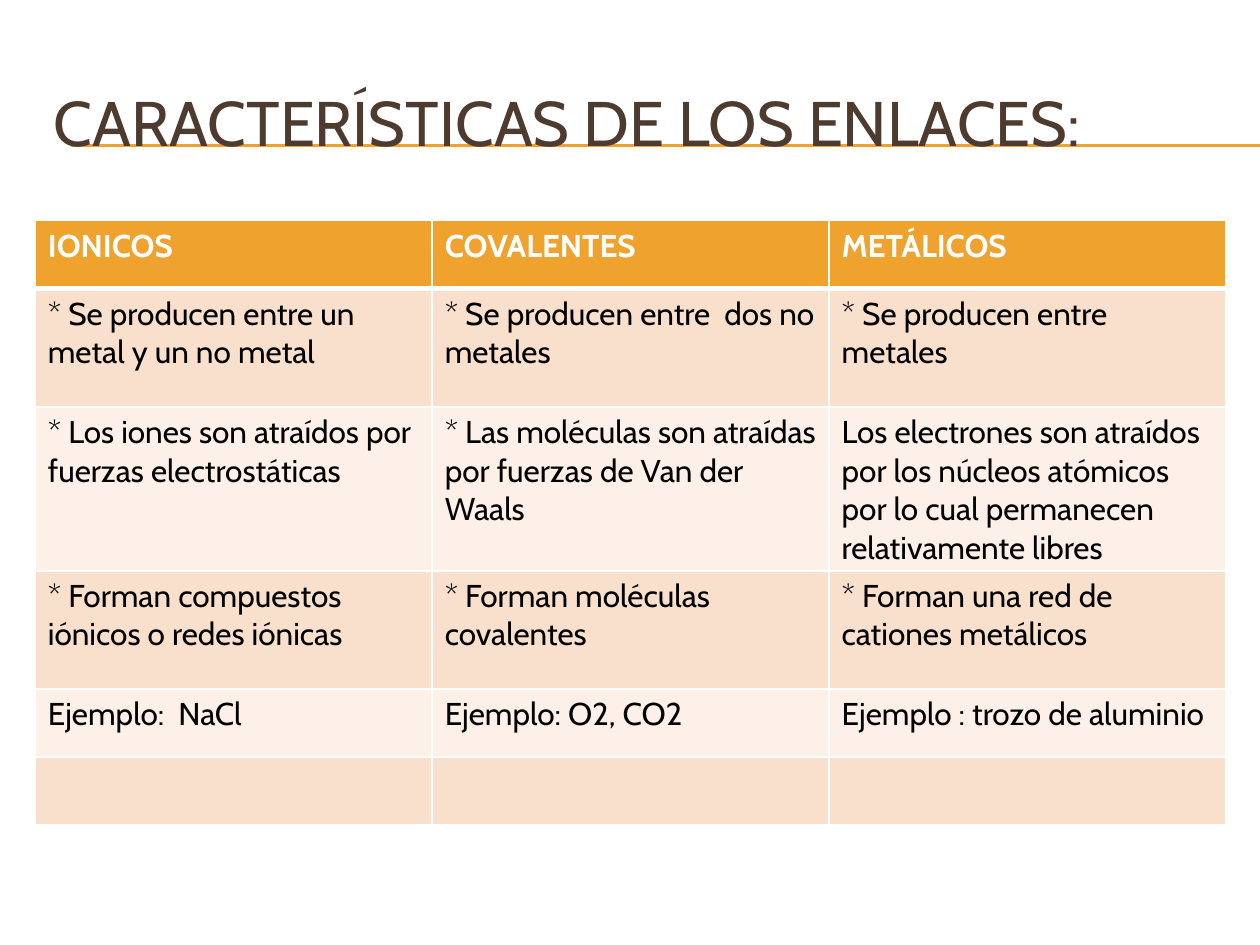
from dataclasses import dataclass

from lxml import etree
from pptx import Presentation
from pptx.dml.color import RGBColor
from pptx.enum.shapes import MSO_CONNECTOR
from pptx.enum.text import MSO_ANCHOR
from pptx.oxml.ns import qn
from pptx.util import Inches, Pt

STRAIGHT = MSO_CONNECTOR.STRAIGHT
TOP, MIDDLE = MSO_ANCHOR.TOP, MSO_ANCHOR.MIDDLE

WHITE = RGBColor(0xFF, 0xFF, 0xFF)
BLACK = RGBColor(0x00, 0x00, 0x00)
BROWN = RGBColor(0x4E, 0x3B, 0x30)
ORANGE = RGBColor(0xF0, 0xA2, 0x2E)
PEACH = RGBColor(0xF9, 0xE0, 0xCD)
CREAM = RGBColor(0xFC, 0xF0, 0xE8)

FONT = "Cabin"
WIDE, HIGH = Inches(10), Inches(7.5)
SHORT, TALL = 0.54, 0.94


@dataclass
class Row:
    height: float
    cells: tuple[str, str, str]


ROWS = [
    Row(SHORT, ("IONICOS", "COVALENTES", "METÁLICOS")),
    Row(TALL, ("* Se producen entre un metal y un no metal",
               "* Se producen entre  dos no metales",
               "* Se producen entre metales")),
    Row(TALL, ("* Los iones son atraídos por  fuerzas electrostáticas",
               "* Las moléculas son atraídas por fuerzas de Van der Waals",
               "Los electrones son atraídos por los núcleos atómicos "
               "por lo cual permanecen relativamente libres")),
    Row(TALL, ("* Forman compuestos iónicos o redes iónicas",
               "* Forman moléculas covalentes",
               "* Forman una red de cationes metálicos")),
    Row(SHORT, ("Ejemplo:  NaCl", "Ejemplo: O2, CO2",
                "Ejemplo : trozo de aluminio")),
    Row(SHORT, ("", "", "")),
]


def write(frame, text: str, *, size: float, color: RGBColor,
          bold: bool = False, anchor=TOP) -> None:
    frame.word_wrap = True
    frame.vertical_anchor = anchor
    par = frame.paragraphs[0]
    font = par.font
    if text:
        run = par.add_run()
        run.text = text
        font = run.font
    font.name, font.size, font.bold = FONT, Pt(size), bold
    font.color.rgb = color


def rule(slide, y: float) -> None:
    """Draw a thin line from the left margin to the slide's right edge."""
    line = slide.shapes.add_connector(
        STRAIGHT, Inches(0.56), Inches(y), WIDE, Inches(y))
    line.line.color.rgb = ORANGE
    line.line.width = Pt(0.75)
    etree.SubElement(line._element.spPr, qn("a:effectLst"))


def border(cell, **widths: float) -> None:
    """Add white borders, keyed by side (L, R, T, B), ahead of the fill."""
    props = cell._tc.get_or_add_tcPr()
    for spot, (side, width) in enumerate(widths.items()):
        edge = etree.Element(qn(f"a:ln{side}"), w=str(Pt(width)))
        fill = etree.SubElement(edge, qn("a:solidFill"))
        etree.SubElement(fill, qn("a:srgbClr"), val=str(WHITE))
        props.insert(spot, edge)


def grid(slide, rows: list[Row]) -> None:
    cols = len(rows[0].cells)
    total = sum(row.height for row in rows)
    table = slide.shapes.add_table(
        len(rows), cols, Inches(0.28), Inches(1.75),
        Inches(3.15 * cols), Inches(total)).table
    for r, row in enumerate(rows):
        table.rows[r].height = Inches(row.height)
        head = r == 0
        fill = ORANGE if head else PEACH if r % 2 else CREAM
        for c, text in enumerate(row.cells):
            cell = table.cell(r, c)
            cell.fill.solid()
            cell.fill.fore_color.rgb = fill
            border(cell, L=1, R=1, T=3 if r == 1 else 1, B=3 if head else 1)
            write(cell.text_frame, text, size=18, bold=head,
                  color=WHITE if head else BLACK)


def main() -> None:
    deck = Presentation()
    deck.slide_width, deck.slide_height = WIDE, HIGH
    slide = deck.slides.add_slide(deck.slide_layouts[6])
    for y in (1.15, 1.16):
        rule(slide, y)
    title = slide.shapes.add_textbox(
        Inches(0.33), Inches(0.5), Inches(9.5), Inches(0.92))
    write(title.text_frame, "CARACTERÍSTICAS DE LOS ENLACES:",
          size=36, color=BROWN, anchor=MIDDLE)
    grid(slide, ROWS)
    deck.save("out.pptx")


if __name__ == "__main__":
    main()
